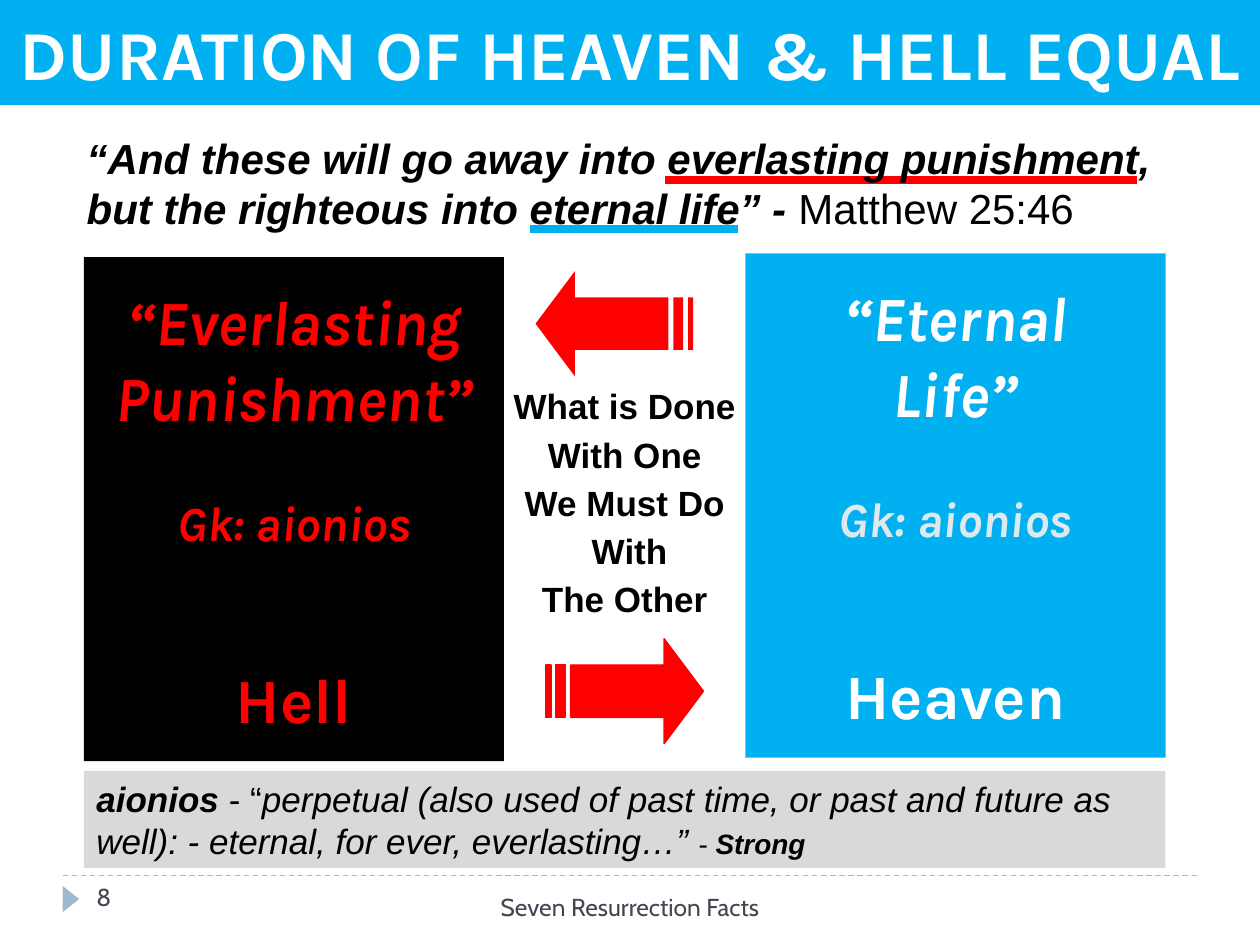
from dataclasses import dataclass

from pptx import Presentation
from pptx.dml.color import RGBColor
from pptx.enum.dml import MSO_LINE
from pptx.enum.shapes import MSO_CONNECTOR, MSO_SHAPE
from pptx.enum.text import MSO_ANCHOR as ANCHOR, MSO_AUTO_SIZE as AUTO, PP_ALIGN as ALIGN
from pptx.oxml.ns import qn
from pptx.util import Pt
from lxml.etree import SubElement

BLACK = RGBColor(0x00, 0x00, 0x00)
WHITE = RGBColor(0xFF, 0xFF, 0xFF)
RED = RGBColor(0xFF, 0x00, 0x00)
SKY = RGBColor(0x00, 0xB0, 0xF0)
ICE = RGBColor(0xDD, 0xE9, 0xEC)
STEEL = RGBColor(0x9F, 0xB8, 0xCD)
GREY = RGBColor(0xD9, 0xD9, 0xD9)
SLATE = RGBColor(0x46, 0x46, 0x53)

ARIAL = {"name": "Arial", "size": Pt(20), "color": BLACK}
ARIAL_BOLD = ARIAL | {"bold": True}
KARLA = {"name": "Karla", "size": Pt(36), "bold": True}
FOOTER = {"name": "Cabin", "size": Pt(14), "color": SLATE}


@dataclass
class Panel:
    left: float
    top: float
    fill: RGBColor
    border: RGBColor | None
    color: RGBColor
    greek_color: RGBColor
    phrase: tuple[str, str]
    place: str


@dataclass
class Arrow:
    left: float
    top: float
    points_left: bool
    outlined: bool


PANELS = [
    Panel(48, 147, BLACK, None, RED, RED, ("“Everlasting", "Punishment”"), "Hell"),
    Panel(426, 145, SKY, STEEL, WHITE, ICE, ("“Eternal", "Life”"), "Heaven"),
]
ARROWS = [Arrow(312, 365, False, True), Arrow(306, 155, True, False)]
ARROW_W, ARROW_H = 90, 60


def add_run(p, text: str, fmt: dict) -> None:
    r = p.add_run()
    r.text = text
    for key, value in fmt.items():
        if key == "color":
            r.font.color.rgb = value
        else:
            setattr(r.font, key, value)


def paint(sp, fill: RGBColor, border: RGBColor | None = None) -> None:
    sp.fill.solid()
    sp.fill.fore_color.rgb = fill
    if border is None:
        sp.line.fill.background()
    else:
        sp.line.color.rgb = border
        sp.line.width = Pt(0.75)


def add_text(s, left: float, top: float, width: float, height: float,
             runs: list[tuple[str, dict]], align=ALIGN.LEFT):
    sp = s.shapes.add_textbox(Pt(left), Pt(top), Pt(width), Pt(height))
    tf = sp.text_frame
    tf.word_wrap = True
    p = tf.paragraphs[0]
    p.alignment = align
    for text, fmt in runs:
        add_run(p, text, fmt)
    return sp


def add_rule(s, x1: float, x2: float, y: float, color: RGBColor, width: float, dash=None) -> None:
    sp = s.shapes.add_connector(MSO_CONNECTOR.STRAIGHT, Pt(x1), Pt(y), Pt(x2), Pt(y))
    sp.line.color.rgb = color
    sp.line.width = Pt(width)
    if dash is not None:
        sp.line.dash_style = dash
    SubElement(sp._element.spPr, qn("a:effectLst"))


def add_panel(s, panel: Panel) -> None:
    sp = s.shapes.add_shape(MSO_SHAPE.RECTANGLE, Pt(panel.left), Pt(panel.top), Pt(240), Pt(288))
    sp.shadow.inherit = False
    paint(sp, panel.fill, panel.border)
    tf = sp.text_frame
    tf.word_wrap = False
    tf.vertical_anchor = ANCHOR.MIDDLE
    main = KARLA | {"color": panel.color}
    italic = main | {"italic": True}
    greek = italic | {"size": Pt(28), "color": panel.greek_color}
    lines = [(panel.phrase[0], italic, 0), (panel.phrase[1], italic, 0),
             ("Gk: aionios", greek, 33.5), (panel.place, main, 62.5)]
    for i, (text, fmt, gap) in enumerate(lines):
        p = tf.add_paragraph() if i else tf.paragraphs[0]
        p.alignment = ALIGN.CENTER
        p.space_before = Pt(gap)
        add_run(p, text, fmt)


def add_arrow(s, arrow: Arrow) -> None:
    """Draw a block arrow whose tail is broken into two stripes."""
    w, h = ARROW_W, ARROW_H
    neck, upper, lower = w * 0.75, h / 4, h * 3 / 4

    def bar(x1: float, x2: float) -> list[tuple[float, float]]:
        return [(x1, upper), (x1, lower), (x2, lower), (x2, upper)]

    shaft = w * 5 / 32
    head = [(neck, 0), (neck, upper), (shaft, upper), (shaft, lower),
            (neck, lower), (neck, h), (w, h / 2)]
    outlines = [[(Pt(arrow.left + (w - x if arrow.points_left else x)), Pt(arrow.top + y))
                 for x, y in outline]
                for outline in (head, bar(w / 16, w / 8), bar(0, w / 32))]
    builder = s.shapes.build_freeform(*outlines[0][0])
    for i, outline in enumerate(outlines):
        if i:
            builder.move_to(*outline[0])
        builder.add_line_segments(outline[1:], close=True)
    sp = builder.convert_to_shape()
    sp.shadow.inherit = False
    paint(sp, RED, RED if arrow.outlined else None)


def main() -> None:
    prs = Presentation()
    prs.slide_width, prs.slide_height = Pt(720), Pt(540)
    s = prs.slides.add_slide(prs.slide_layouts[5])

    # Title band
    title = s.shapes.title
    title.left, title.top, title.width, title.height = Pt(0), Pt(0), Pt(720), Pt(60)
    paint(title, SKY)
    tf = title.text_frame
    tf.auto_size = AUTO.NONE
    tf.word_wrap = False
    tf.vertical_anchor = ANCHOR.MIDDLE
    p = tf.paragraphs[0]
    p.alignment = ALIGN.CENTER
    add_run(p, "DURATION OF HEAVEN & HELL EQUAL", KARLA | {"size": Pt(40), "color": WHITE})

    # Footer rule and marker
    add_rule(s, 36, 684, 500.4, STEEL, 0.75, MSO_LINE.DASH)
    marker = s.shapes.add_shape(MSO_SHAPE.ISOSCELES_TRIANGLE, Pt(33), Pt(509), Pt(15), Pt(9.5))
    marker.rotation = 90
    marker.shadow.inherit = False
    paint(marker, STEEL)

    # Verse with underlined phrases
    add_rule(s, 380, 650, 103, RED, 4.5)
    verse = ARIAL | {"size": Pt(24)}
    add_text(s, 42.5, 72, 642, 65.5, [
        ("“And these will go away into everlasting punishment, "
         "but the righteous into eternal life” - ", verse | {"bold": True, "italic": True}),
        ("Matthew 25:46", verse)])
    add_rule(s, 303, 421.5, 131, SKY, 4.5)

    # Panels and the arrows between them
    for panel in PANELS:
        add_panel(s, panel)
    for arrow in ARROWS:
        add_arrow(s, arrow)

    # Middle statement
    lines = ["What is Done", "With One", "We Must Do", " With", "The Other"]
    sp = add_text(s, 282, 223, 150, 141, [(lines[0], ARIAL_BOLD)], ALIGN.CENTER)
    for line in lines[1:]:
        p = sp.text_frame.add_paragraph()
        p.alignment = ALIGN.CENTER
        p.space_before = Pt(10.7)
        add_run(p, line, ARIAL_BOLD)
    for p in sp.text_frame.paragraphs:
        p.line_spacing = 0.7

    # Definition
    italic = ARIAL | {"italic": True}
    sp = add_text(s, 48, 440.5, 618, 55.5, [
        ("aionios ", ARIAL_BOLD | {"italic": True}),
        ("- “", ARIAL),
        ("perpetual (also used of past time, or past and future as well): "
         "- eternal, for ever, everlasting…” ", italic),
        ("-", ARIAL | {"size": Pt(16)}),
        (" Strong", italic | {"size": Pt(16), "bold": True})])
    paint(sp, GREY)

    # Footer text
    add_text(s, 174, 506, 372, 29, [("Seven Resurrection Facts", FOOTER)], ALIGN.CENTER)
    add_text(s, 48, 500.4, 156, 29, [("8", FOOTER)])

    prs.save("out.pptx")


if __name__ == "__main__":
    main()
